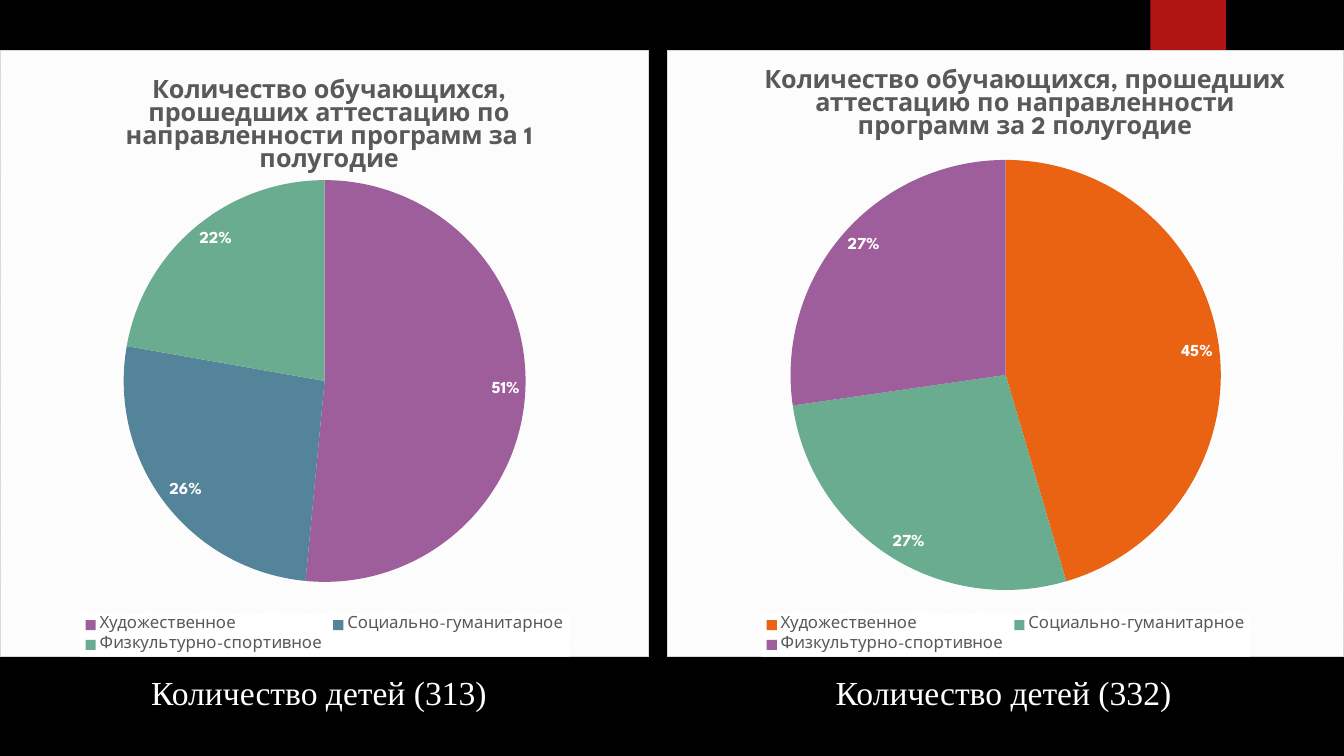
from dataclasses import dataclass

from pptx import Presentation, util as u
from pptx.chart.data import CategoryChartData
from pptx.dml.color import RGBColor
from pptx.enum import chart as ch, shapes, text
from pptx.oxml import parse_xml
from pptx.oxml.ns import nsdecls, qn


@dataclass(frozen=True)
class Theme:
    black: str = "000000"
    white: str = "FFFFFF"
    grey: str = "595959"
    stripe: str = "F2F2F2"
    border: str = "D9D9D9"
    red: str = "B01513"
    orange: str = "EA6312"
    green: str = "6AAC90"
    purple: str = "9E5E9B"
    blue: str = "54849A"
    chart_font: str = "League Spartan"
    caption_font: str = "Times New Roman"
    title_size: int = 18
    label_size: int = 12
    caption_size: int = 24


T = Theme()
WIDTH, HEIGHT = 13.33, 7.5
CATEGORIES = ["Художественное", "Социально-гуманитарное", "Физкультурно-спортивное"]
TITLE = "Количество обучающихся, прошедших аттестацию по направленности программ за {} полугодие"


def style(font, color, size, **formats):
    formats["size"] = u.Pt(size)
    for name, value in formats.items():
        setattr(font, name, value)
    font.color.rgb = RGBColor.from_string(color)


def set_layout(parent, index, inner=False, **shares):
    """Place a chart part by shares of the chart's size."""
    for old in parent.findall(qn("c:layout")):
        parent.remove(old)
    target = '<c:layoutTarget val="inner"/>' if inner else ""
    modes = "".join(f'<c:{k}Mode val="edge"/>' for k in "xy")
    values = "".join(f'<c:{k} val="{v}"/>' for k, v in shares.items())
    parent.insert(index, parse_xml(
        f'<c:layout {nsdecls("c")}><c:manualLayout>{target}{modes}{values}'
        "</c:manualLayout></c:layout>"))


def shape_props(content):
    return parse_xml(f'<c:spPr {nsdecls("c", "a")}>{content}</c:spPr>')


def solid(color):
    return f'<a:solidFill><a:srgbClr val="{color}"/></a:solidFill>'


class Deck:
    def __init__(self):
        self.prs = Presentation()
        self.prs.slide_width = u.Inches(WIDTH)
        self.prs.slide_height = u.Inches(HEIGHT)
        self.s = self.prs.slides.add_slide(self.prs.slide_layouts[6])
        fill = self.s.background.fill
        fill.solid()
        fill.fore_color.rgb = RGBColor.from_string(T.black)

    def box(self, x, y, w, h):
        """Turn percentages of the slide into lengths."""
        return [u.Inches(share * side / 100)
                for share, side in zip((x, y, w, h), (WIDTH, HEIGHT) * 2)]

    def tab(self, place, color):
        sp = self.s.shapes.add_shape(shapes.MSO_SHAPE.RECTANGLE, *self.box(*place))
        sp.shadow.inherit = False
        sp.fill.solid()
        sp.fill.fore_color.rgb = RGBColor.from_string(color)
        sp.line.fill.background()

    def caption(self, place, words):
        tf = self.s.shapes.add_textbox(*self.box(*place)).text_frame
        tf.word_wrap = True
        p = tf.paragraphs[0]
        r = p.add_run()
        r.text = words
        style(r.font, T.white, T.caption_size, name=T.caption_font)

    def pie(self, place, title, values, colors, title_at, plot_at):
        data = CategoryChartData()
        data.categories = CATEGORIES
        data.add_series("Series 1", values)
        chart = self.s.shapes.add_chart(
            ch.XL_CHART_TYPE.PIE, *self.box(*place), data).chart
        style(chart.font, T.white, 10, name=T.chart_font)
        chart.element.find(qn("c:chart")).addnext(shape_props(
            f'<a:pattFill prst="dkDnDiag"><a:fgClr><a:srgbClr val="{T.stripe}"/></a:fgClr>'
            f'<a:bgClr><a:srgbClr val="{T.white}"/></a:bgClr></a:pattFill>'
            f'<a:ln w="{u.Pt(0.75)}">{solid(T.border)}</a:ln>'))
        self.pie_title(chart, title, title_at)
        self.pie_legend(chart)
        self.pie_slices(chart.plots[0], colors)
        x, y, w, h = plot_at
        set_layout(chart.element.find(f'{qn("c:chart")}/{qn("c:plotArea")}'), 0,
                   inner=True, x=x, y=y, w=w, h=h)

    def pie_title(self, chart, words, place):
        chart.has_title = True
        title = chart.chart_title
        p = title.text_frame.paragraphs[0]
        r = p.add_run()
        r.text = words
        style(r.font, T.grey, T.title_size, name=T.chart_font, bold=True)
        x, y = place
        set_layout(title._element, 1, x=x, y=y)

    def pie_legend(self, chart):
        chart.has_legend = True
        legend = chart.legend
        legend.position = ch.XL_LEGEND_POSITION.BOTTOM
        legend.include_in_layout = False
        legend._element.find(qn("c:overlay")).addnext(shape_props(solid(T.white)))
        style(legend.font, T.grey, T.label_size, name=T.chart_font)

    def pie_slices(self, plot, colors):
        plot.vary_by_categories = True
        for i, color in enumerate(colors):
            fmt = plot.series[0].points[i].format
            fmt.fill.solid()
            fmt.fill.fore_color.rgb = RGBColor.from_string(color)
            fmt.line.fill.background()
        labels = plot.series[0].data_labels
        formats = {"show_value": True, "number_format": '0"%"',
                   "number_format_is_linked": False,
                   "position": ch.XL_LABEL_POSITION.INSIDE_END}
        for name, value in formats.items():
            setattr(labels, name, value)
        style(labels.font, T.white, T.label_size, name=T.chart_font, bold=True)


def main():
    deck = Deck()
    deck.tab((85.6, 0, 5.63, 16.67), T.red)
    deck.pie((49.66, 6.67, 50.34, 80.27), TITLE.format(2), (45, 27, 27),
             (T.orange, T.green, T.purple), (0.136, 0.02), (0.18, 0.18, 0.64, 0.71))
    deck.pie((0, 6.67, 48.31, 80.27), TITLE.format(1), (51, 26, 22),
             (T.purple, T.blue, T.green), (0.186, 0.037), (0.19, 0.19, 0.62, 0.71))
    deck.caption((61.44, 88.2, 27.2, 6.67), "Количество детей (332)")
    deck.caption((10.5, 88.2, 27.2, 6.67), "Количество детей (313)")
    deck.prs.save("out.pptx")


if __name__ == "__main__":
    main()
